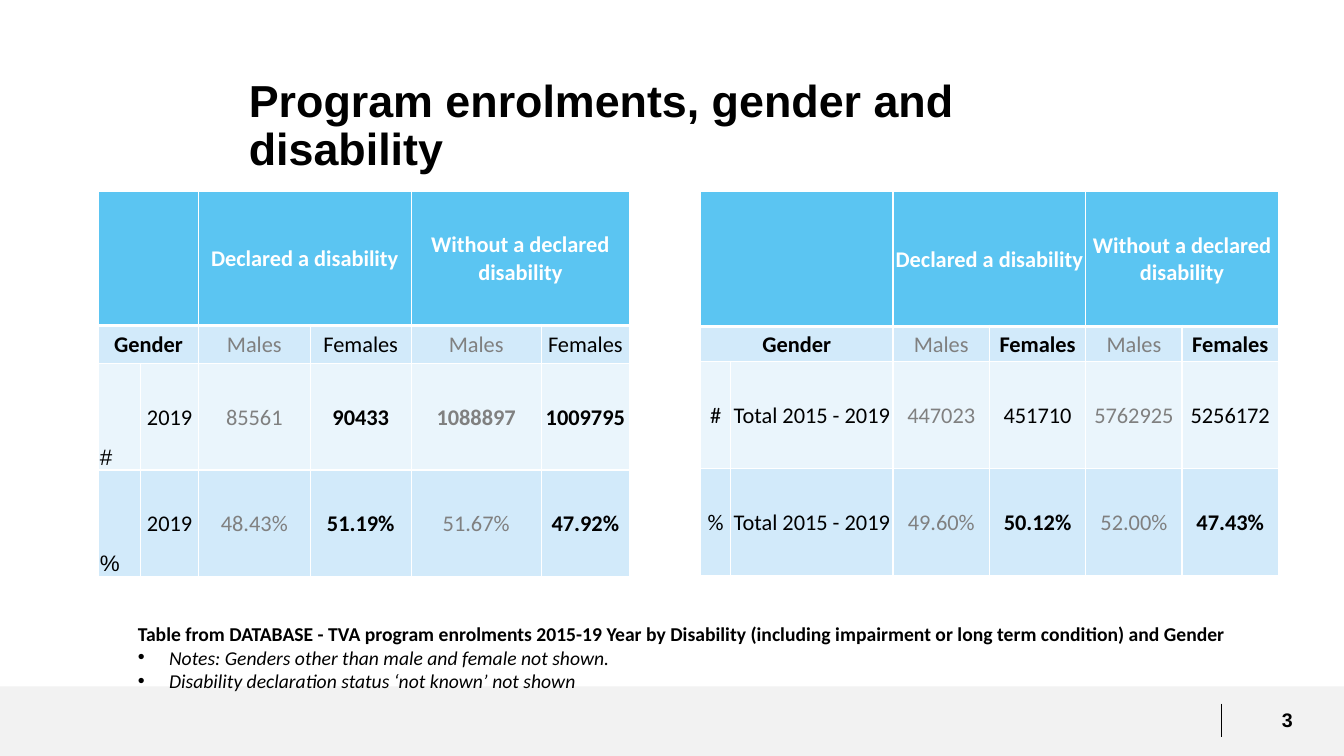
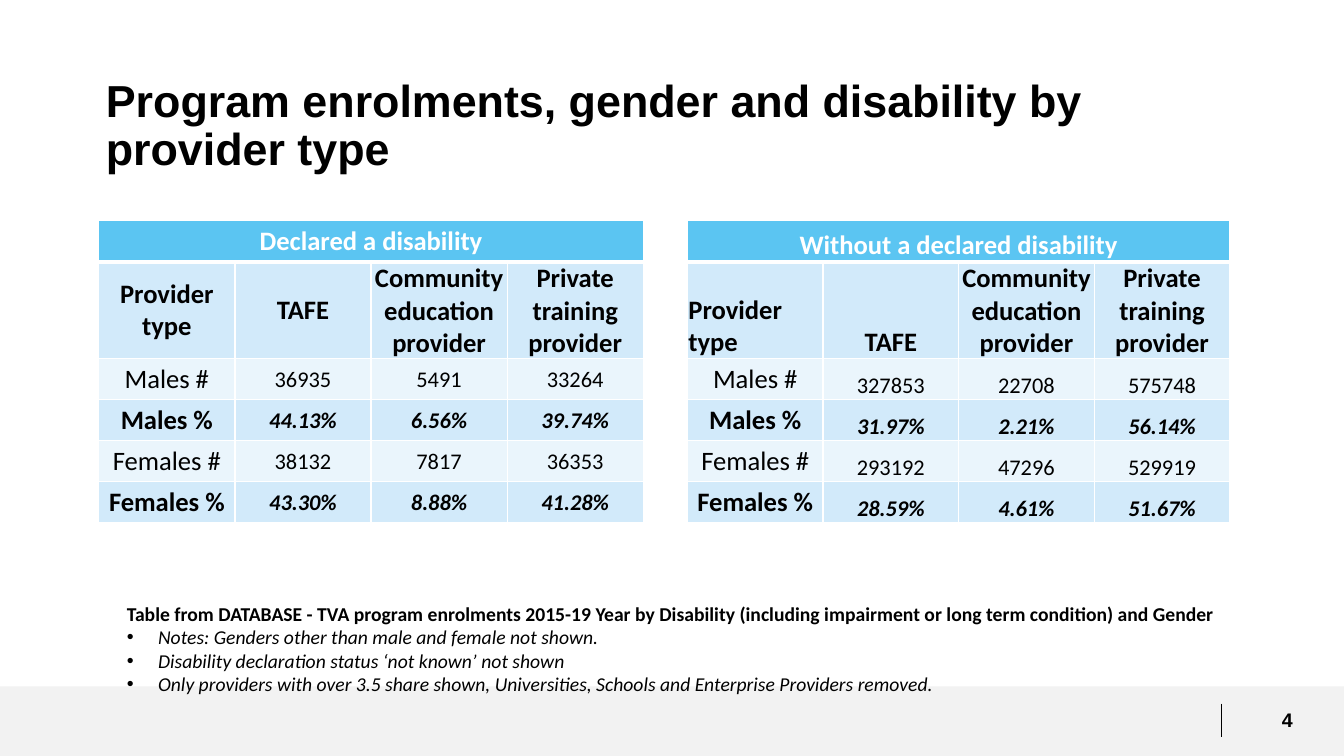
"""Build two slides of program enrolment tables by gender and disability."""
import pptx
import pptx.dml.color
import pptx.enum.shapes
import pptx.enum.text
import pptx.oxml
import pptx.oxml.ns
import pptx.util

COLORS = {
    "header": "5BC5F2",
    "dark_band": "D2EAFA",
    "light_band": "EAF5FC",
    "footer": "F2F2F2",
    "white": "FFFFFF",
    "black": "000000",
    "muted": "808080",
}
SLIDE_WIDTH = pptx.util.Inches(13.33)
SLIDE_HEIGHT = pptx.util.Inches(7.5)
ALIGN = pptx.enum.text.PP_ALIGN
ANCHOR = pptx.enum.text.MSO_ANCHOR
BULLET_INDENT = pptx.util.Inches(0.31)
SOURCE_LINE = (
    "Table from DATABASE - TVA program enrolments 2015-19 Year by Disability "
    "(including impairment or long term condition) and Gender"
)
NOTES = [
    "Notes: Genders other than male and female not shown.",
    "Disability declaration status ‘not known’ not shown",
]


def across(percent):
    """Return a share of the slide's width."""
    return round(SLIDE_WIDTH * percent / 100)


def down(percent):
    """Return a share of the slide's height."""
    return round(SLIDE_HEIGHT * percent / 100)


def place(left, top, width, height):
    """Turn four percentages of the slide into a position and size."""
    return across(left), down(top), across(width), down(height)


def rgb(name):
    """Look up a named colour."""
    return pptx.dml.color.RGBColor.from_string(COLORS[name])


def write_text(paragraph, text, size=14, font="Calibri", color="black",
               bold=False, italic=False, align=ALIGN.LEFT):
    """Add one formatted run to a paragraph."""
    paragraph.alignment = align
    run = paragraph.add_run()
    run.text = text
    run.font.size = pptx.util.Pt(size)
    run.font.name = font
    run.font.bold = bold
    run.font.italic = italic
    run.font.color.rgb = rgb(color)


def add_text_frame(slide, box):
    """Add a wrapping text box and return its text frame."""
    frame = slide.shapes.add_textbox(*place(*box)).text_frame
    frame.word_wrap = True
    return frame


def add_footer(slide, number):
    """Draw the footer band, its divider and the slide number."""
    band = slide.shapes.add_shape(
        pptx.enum.shapes.MSO_SHAPE.RECTANGLE, *place(0, 90.8, 100, 9.2))
    band.shadow.inherit = False
    band.fill.solid()
    band.fill.fore_color.rgb = rgb("footer")
    band.line.fill.background()
    frame = add_text_frame(slide, (91.58, 92.93, 8.42, 4.53))
    write_text(frame.paragraphs[0], str(number), font="Arial", bold=True,
               align=ALIGN.CENTER)
    divider = slide.shapes.add_connector(
        pptx.enum.shapes.MSO_CONNECTOR.STRAIGHT,
        across(90.9), down(93.07), across(90.9), down(97.47))
    divider.line.color.rgb = rgb("black")
    divider.line.width = pptx.util.Pt(0.75)
    properties = divider._element.spPr
    properties.append(pptx.oxml.parse_xml(
        f'<a:effectLst {pptx.oxml.ns.nsdecls("a")}/>'))


def add_title(slide, text, box):
    """Write the slide title."""
    frame = add_text_frame(slide, box)
    frame.margin_left = frame.margin_right = pptx.util.Inches(0.04)
    frame.margin_top = frame.margin_bottom = pptx.util.Inches(0.04)
    frame.paragraphs[0].line_spacing = 0.9
    write_text(frame.paragraphs[0], text, size=32, font="Arial", bold=True)


def add_notes(slide, notes, box):
    """Write the source line and its bulleted notes."""
    frame = add_text_frame(slide, box)
    write_text(frame.paragraphs[0], SOURCE_LINE, bold=True)
    for note in notes:
        paragraph = frame.add_paragraph()
        write_text(paragraph, note, italic=True)
        properties = paragraph._p.get_or_add_pPr()
        properties.set("marL", str(BULLET_INDENT))
        properties.set("indent", str(-BULLET_INDENT))
        for element in ('<a:buFont {} typeface="Arial"/>', '<a:buChar {} char="•"/>'):
            properties.append(pptx.oxml.parse_xml(
                element.format(pptx.oxml.ns.nsdecls("a"))))


def set_borders(cell, top, bottom):
    """Give a cell white borders, with top and bottom widths in points."""
    properties = cell._tc.get_or_add_tcPr()
    for side, points in (("L", 1), ("R", 1), ("T", top), ("B", bottom)):
        properties.append(pptx.oxml.parse_xml(
            f'<a:ln{side} {pptx.oxml.ns.nsdecls("a")} w="{pptx.util.Pt(points)}">'
            f'<a:solidFill><a:srgbClr val="{COLORS["white"]}"/></a:solidFill>'
            f'</a:ln{side}>'))


def style_cell(cell, row):
    """Set the borders, banded fill and margins of a cell."""
    set_borders(cell, top=3 if row == 1 else 1, bottom=3 if row == 0 else 1)
    cell.fill.solid()
    band = "dark_band" if row % 2 else "light_band"
    cell.fill.fore_color.rgb = rgb("header" if row == 0 else band)
    cell.margin_left = cell.margin_right = pptx.util.Inches(0.01)
    cell.margin_top = pptx.util.Inches(0.01)
    cell.margin_bottom = 0


def entry(text, anchor=ANCHOR.MIDDLE, **text_format):
    """Describe a table cell, centred unless told otherwise."""
    return text, anchor, {"size": 16, "align": ALIGN.CENTER, **text_format}


def heading(text, **options):
    """Describe a white header cell."""
    return entry(text, color="white", bold=True, **options)


def bold(text, **options):
    """Describe a bold cell."""
    return entry(text, bold=True, **options)


def muted(text, **options):
    """Describe a grey cell."""
    return entry(text, color="muted", **options)


def add_table(slide, left, top, widths, heights, rows):
    """Add a table in which None continues the cell to its left."""
    frame = slide.shapes.add_table(
        len(heights), len(widths),
        *place(left, top, sum(widths), sum(heights)))
    table = frame.table
    table.first_row = table.horz_banding = False
    for column, width in zip(table.columns, widths):
        column.width = across(width)
    for row, height in zip(table.rows, heights):
        row.height = down(height)
    for row_index, row in enumerate(rows):
        for column_index, content in enumerate(row):
            cell = table.cell(row_index, column_index)
            style_cell(cell, row_index)
            if content is None:
                continue
            end = column_index
            while end + 1 < len(row) and row[end + 1] is None:
                end += 1
            if end > column_index:
                cell.merge(table.cell(row_index, end))
            text, cell.vertical_anchor, text_format = content
            if text:
                write_text(cell.text_frame.paragraphs[0], text, **text_format)


def add_gender_table(slide, left, widths, heights, females, body):
    """Add a table of males and females by disability status."""
    genders = [muted("Males"), females("Females")]
    rows = [
        [heading(""), None, heading("Declared a disability"), None,
         heading("Without a declared disability"), None],
        [bold("Gender"), None, *genders, *genders],
        *body,
    ]
    add_table(slide, left, 25.33, widths, heights, rows)


def add_provider_table(slide, left, column_width, title, anchor, label_align, body):
    """Add a table of enrolments by provider type."""
    providers = ["TAFE", "Community education provider", "Private training provider"]
    rows = [
        [heading(title, size=19, anchor=anchor), None, None, None],
        [bold("Provider type", size=19, anchor=anchor, align=label_align),
         *[bold(name, size=19, anchor=anchor) for name in providers]],
    ]
    for label, *values in body:
        share = label.endswith("%")
        rows.append([
            entry(label, size=19, bold=share),
            *[entry(value, anchor=anchor, bold=share, italic=share)
              for value in values]])
    heights = [5.43, 12.75] + [5.43] * 4
    add_table(slide, left, 29.2, [column_width] * 4, heights, rows)


def build_gender_slide(slide):
    """Fill the slide on gender and disability."""
    add_title(slide, "Program enrolments, gender and disability",
              (18.22, 9.87, 62.92, 14))
    symbol = {"anchor": ANCHOR.BOTTOM, "align": ALIGN.LEFT, "font": "Arial"}
    add_gender_table(
        slide, 7.35, [3.13, 4.28, 8.33, 7.51, 9.67, 6.58],
        [17.73, 5.07, 14.05, 14.05], entry,
        [[entry("#", **symbol), entry("2019"), muted("85561"), bold("90433"),
          muted("1088897", bold=True), bold("1009795")],
         [entry("%", **symbol), entry("2019"), muted("48.43%"), bold("51.19%"),
          muted("51.67%"), bold("47.92%")]])
    add_gender_table(
        slide, 52.12, [2.25, 12.08] + [7.17] * 4,
        [17.87, 4.67, 14.13, 14.13], bold,
        [[entry("#"), entry("Total 2015 - 2019"), muted("447023"),
          entry("451710"), muted("5762925"), entry("5256172")],
         [entry("%"), entry("Total 2015 - 2019"), muted("49.60%"),
          bold("50.12%"), muted("52.00%"), bold("47.43%")]])
    add_notes(slide, NOTES, (9.52, 81.6, 87.08, 10.8))


def build_provider_slide(slide):
    """Fill the slide on provider types."""
    add_title(slide, "Program enrolments, gender and disability by provider type",
              (7.58, 9.87, 83.92, 14.4))
    add_provider_table(
        slide, 7.35, 10.13, "Declared a disability", ANCHOR.MIDDLE, ALIGN.CENTER,
        [("Males #", "36935", "5491", "33264"),
         ("Males %", "44.13%", "6.56%", "39.74%"),
         ("Females #", "38132", "7817", "36353"),
         ("Females %", "43.30%", "8.88%", "41.28%")])
    add_provider_table(
        slide, 51.15, 10.09, "Without a declared disability", ANCHOR.BOTTOM, ALIGN.LEFT,
        [("Males #", "327853", "22708", "575748"),
         ("Males %", "31.97%", "2.21%", "56.14%"),
         ("Females #", "293192", "47296", "529919"),
         ("Females %", "28.59%", "4.61%", "51.67%")])
    removed = ("Only providers with over 3.5 share shown, Universities, Schools "
               "and Enterprise Providers removed.")
    add_notes(slide, NOTES + [removed], (8.7, 78.93, 87.08, 13.87))


def main():
    """Create and save the presentation."""
    presentation = pptx.Presentation()
    presentation.slide_width = SLIDE_WIDTH
    presentation.slide_height = SLIDE_HEIGHT
    builders = (build_gender_slide, build_provider_slide)
    for number, build in enumerate(builders, start=3):
        slide = presentation.slides.add_slide(presentation.slide_layouts[6])
        add_footer(slide, number)
        build(slide)
    presentation.save("out.pptx")


if __name__ == "__main__":
    main()
